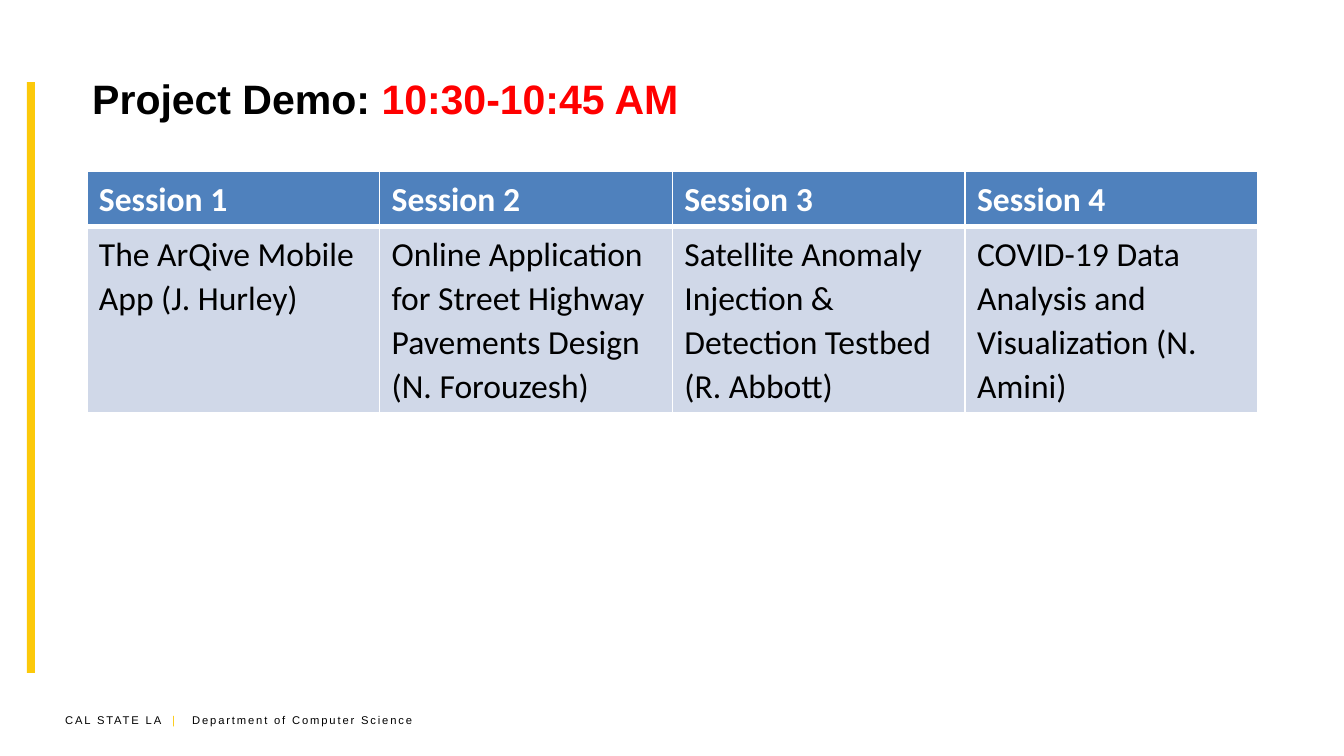
from lxml import etree
from pptx import Presentation
from pptx.dml.color import RGBColor
from pptx.enum import shapes, text
from pptx.oxml.ns import qn
from pptx.util import Pt

SCALE = 914400 / 134.4  # EMU per px
BLACK, WHITE, RED, GOLD = "000000", "FFFFFF", "FF0000", "FCC90A"
BLUE, PALE = "4F81BD", "D0D8E8"


def px(n):
    return round(n * SCALE)


def color(code):
    return RGBColor.from_string(code)


class Deck:
    def __init__(self, width, height):
        self.prs = Presentation()
        self.prs.slide_width, self.prs.slide_height = px(width), px(height)
        self.slide = self.prs.slides.add_slide(self.prs.slide_layouts[6])

    def style(self, font, code, **values):
        for name, value in values.items():
            setattr(font, name, value)
        font.color.rgb = color(code)

    def bar(self, box, fill):
        shape = self.slide.shapes.add_shape(shapes.MSO_SHAPE.RECTANGLE, *map(px, box))
        shape.shadow.inherit = False
        shape.fill.solid()
        shape.fill.fore_color.rgb = color(fill)
        shape.line.fill.background()

    def text(self, box, runs, space=0, tabs=(), **values):
        frame = self.slide.shapes.add_textbox(*map(px, box)).text_frame
        frame.word_wrap = True
        frame.vertical_anchor = text.MSO_ANCHOR.MIDDLE
        par = frame.paragraphs[0]
        if tabs:
            stops = etree.SubElement(par._p.get_or_add_pPr(), qn("a:tabLst"))
            for stop in tabs:
                etree.SubElement(stops, qn("a:tab"), pos=str(px(stop)), algn="l")
        for words, code in runs:
            run = par.add_run()
            run.text = words
            self.style(run.font, code, **values)
            if space:
                run._r.get_or_add_rPr().set("spc", str(space))

    def edges(self, cell, widths):
        props = cell._tc.get_or_add_tcPr()
        for i, (side, width) in enumerate(widths.items()):
            line = etree.Element(qn("a:ln" + side), w=str(Pt(width)))
            fill = etree.SubElement(line, qn("a:solidFill"))
            etree.SubElement(fill, qn("a:srgbClr"), val=WHITE)
            props.insert(i, line)

    def table(self, box, rows, heights, looks):
        grid = self.slide.shapes.add_table(len(rows), len(rows[0]), *map(px, box)).table
        grid.horz_banding = False
        for r, (row, look) in enumerate(zip(rows, looks)):
            grid.rows[r].height = px(heights[r])
            for c, words in enumerate(row):
                cell = grid.cell(r, c)
                cell.text = words
                cell.margin_left = cell.margin_right = px(12)
                cell.margin_top = cell.margin_bottom = px(6)
                cell.fill.solid()
                cell.fill.fore_color.rgb = color(look["fill"])
                self.edges(cell, look["edges"])
                par = cell.text_frame.paragraphs[0]
                par.line_spacing, par.space_after = 1.07, Pt(8)
                self.style(par.runs[0].font, look["ink"], name="Calibri",
                           size=Pt(18), bold=look["bold"])


deck = Deck(1344, 756)

# Footer and side bar
deck.text((52, 707, 392, 27),
          [("CAL STATE LA\t", BLACK), ("|\t", GOLD), ("Department of Computer Science", BLACK)],
          space=100, tabs=(107, 127), name="Arial", size=Pt(6))
deck.bar((27, 82, 8, 591), GOLD)

# Title
deck.text((79, 35, 1196, 126), [("Project Demo: ", BLACK), ("10:30-10:45 AM", RED)],
          name="Arial", size=Pt(22), bold=True)

# Session table
head = {"fill": BLUE, "ink": WHITE, "bold": True, "edges": {"L": 1, "R": 1, "T": 1, "B": 3}}
body = {"fill": PALE, "ink": BLACK, "bold": False, "edges": {"L": 1, "R": 1, "T": 3, "B": 1}}
talks = [
    "The ArQive Mobile App (J. Hurley)",
    "Online Application for Street Highway Pavements Design (N. Forouzesh)",
    "Satellite Anomaly Injection & Detection Testbed (R. Abbott)",
    "COVID-19 Data Analysis and Visualization (N. Amini)",
]
names = [f"Session {n}" for n in range(1, len(talks) + 1)]
deck.table((87, 171, 1171, 241), [names, talks], (54, 187), (head, body))

deck.prs.save("out.pptx")
